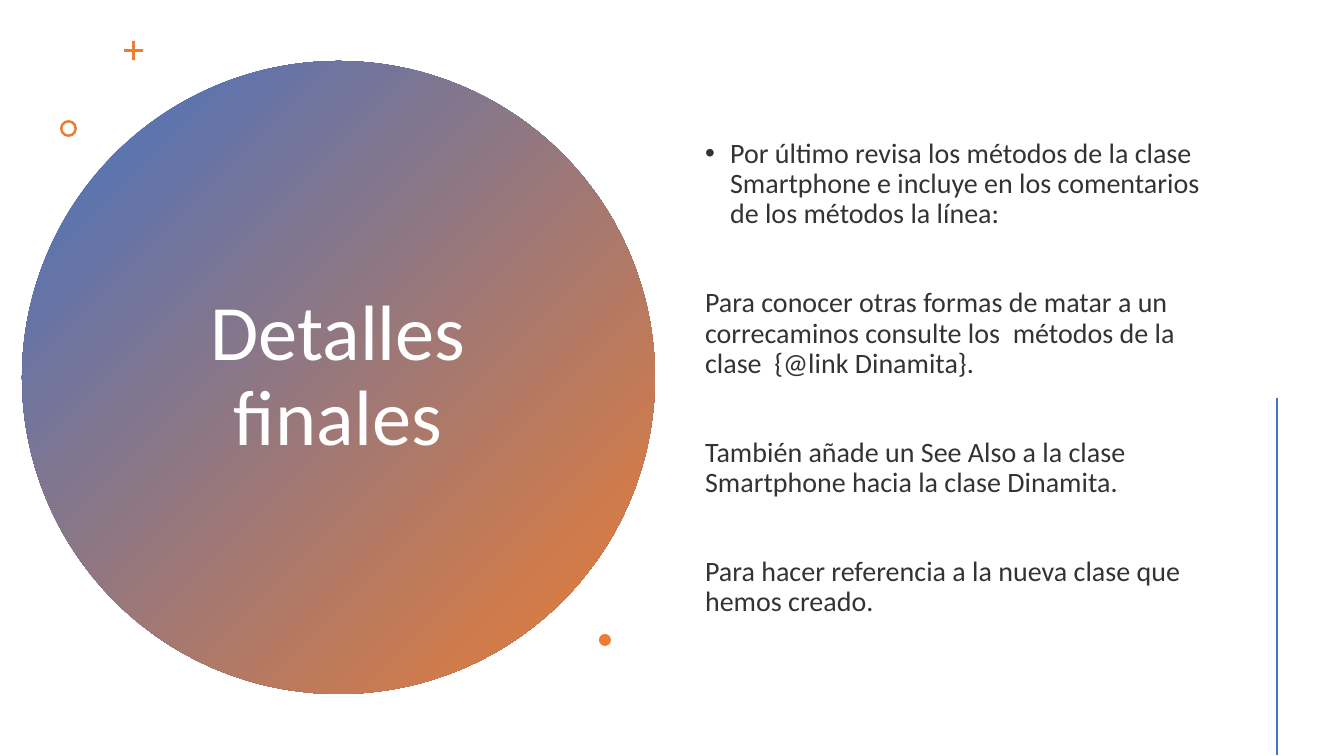
from dataclasses import dataclass

from lxml import etree
from pptx import Presentation
from pptx.dml.color import RGBColor
from pptx.enum.shapes import MSO_CONNECTOR, MSO_SHAPE as Shape
from pptx.enum.text import MSO_ANCHOR, MSO_AUTO_SIZE, PP_ALIGN as Align
from pptx.oxml.ns import qn
from pptx.util import Emu, Pt

SLIDE_W, SLIDE_H = 1344, 756
EMU_PER_PX = 12192000 / SLIDE_W
BLUE, ORANGE, WHITE, DARK = "4472C4", "ED7D31", "FFFFFF", "333333"
FONT = "Calibri"


@dataclass(frozen=True)
class Ornament:
    kind: Shape
    left: int
    top: int
    size: int
    adjust: float | None = None


@dataclass(frozen=True)
class Entry:
    text: str
    before: int
    bullet: bool = False


ORNAMENTS = [
    Ornament(Shape.CROSS, 124, 41, 19, 0.43),
    Ornament(Shape.DONUT, 60, 120, 17, 0.15),
    Ornament(Shape.OVAL, 599, 634, 12),
]
ENTRIES = [
    Entry("Por último revisa los métodos de la clase Smartphone e incluye "
          "en los comentarios de los métodos la línea:", 10, True),
    Entry("Para conocer otras formas de matar a un correcaminos consulte "
          "los  métodos de la clase  {@link Dinamita}.", 42),
    Entry("También añade un See Also a la clase Smartphone hacia la clase "
          "Dinamita.", 42),
    Entry("Para hacer referencia a la nueva clase que hemos creado.", 42),
]


def px(n: int) -> Emu:
    return Emu(round(n * EMU_PER_PX))


def rgb(color: str) -> RGBColor:
    return RGBColor.from_string(color)


def place(sp, left: int, top: int, width: int, height: int) -> None:
    sp.left, sp.top, sp.width, sp.height = map(px, (left, top, width, height))


def prepare_frame(sp):
    tf = sp.text_frame
    tf.word_wrap = True
    tf.auto_size = MSO_AUTO_SIZE.NONE
    tf.vertical_anchor = MSO_ANCHOR.MIDDLE
    return tf


def write(p, text: str, *, size: int, color: str, align=Align.LEFT,
          before: int = 0) -> None:
    p.alignment = align
    p.line_spacing = 0.9
    p.space_before = Pt(before)
    r = p.add_run()
    r.text = text
    r.font.name = FONT
    r.font.size = Pt(size)
    r.font.color.rgb = rgb(color)


def set_bullet(p, shown: bool) -> None:
    pPr = p._p.get_or_add_pPr()
    indent = px(25) if shown else 0
    pPr.set("marL", str(indent))
    pPr.set("indent", str(-indent))
    if shown:
        etree.SubElement(pPr, qn("a:buFont")).set("typeface", "Arial")
        etree.SubElement(pPr, qn("a:buChar")).set("char", "•")
    else:
        etree.SubElement(pPr, qn("a:buNone"))


def add_plain_shape(s, kind: Shape, left: int, top: int, size: int):
    sp = s.shapes.add_shape(kind, px(left), px(top), px(size), px(size))
    sp.shadow.inherit = False
    sp.line.fill.background()
    return sp


def add_circle(s) -> None:
    """Add the gradient disc behind the title."""
    sp = add_plain_shape(s, Shape.OVAL, 22, 61, 633)
    sp.fill.gradient()
    sp.fill.gradient_angle = 315  # counter-clockwise: top left to bottom right
    for stop, color, position in zip(sp.fill.gradient_stops, (BLUE, ORANGE), (0, 1)):
        stop.color.rgb = rgb(color)
        stop.position = position
    s.shapes._spTree.insert(2, sp._element)


def add_ornament(s, o: Ornament) -> None:
    sp = add_plain_shape(s, o.kind, o.left, o.top, o.size)
    sp.fill.solid()
    sp.fill.fore_color.rgb = rgb(ORANGE)
    if o.adjust is not None:
        sp.adjustments[0] = o.adjust


def add_side_line(s) -> None:
    line = s.shapes.add_connector(
        MSO_CONNECTOR.STRAIGHT, px(1277), px(398), px(1277), px(755))
    line.line.color.rgb = rgb(BLUE)
    line.line.width = Pt(2)
    etree.SubElement(line._element.spPr, qn("a:effectLst"))


def main() -> None:
    prs = Presentation()
    prs.slide_width, prs.slide_height = px(SLIDE_W), px(SLIDE_H)
    s = prs.slides.add_slide(prs.slide_layouts[1])
    title, body = s.shapes.title, s.placeholders[1]

    add_circle(s)
    place(title, 137, 142, 402, 471)
    write(prepare_frame(title).paragraphs[0], "Detalles finales",
          size=56, color=WHITE, align=Align.CENTER)

    place(body, 695, 57, 526, 643)
    tf = prepare_frame(body)
    for i, entry in enumerate(ENTRIES):
        p = tf.add_paragraph() if i else tf.paragraphs[0]
        write(p, entry.text, size=20, color=DARK, before=entry.before)
        set_bullet(p, entry.bullet)

    for ornament in ORNAMENTS:
        add_ornament(s, ornament)
    add_side_line(s)
    prs.save("out.pptx")


if __name__ == "__main__":
    main()
